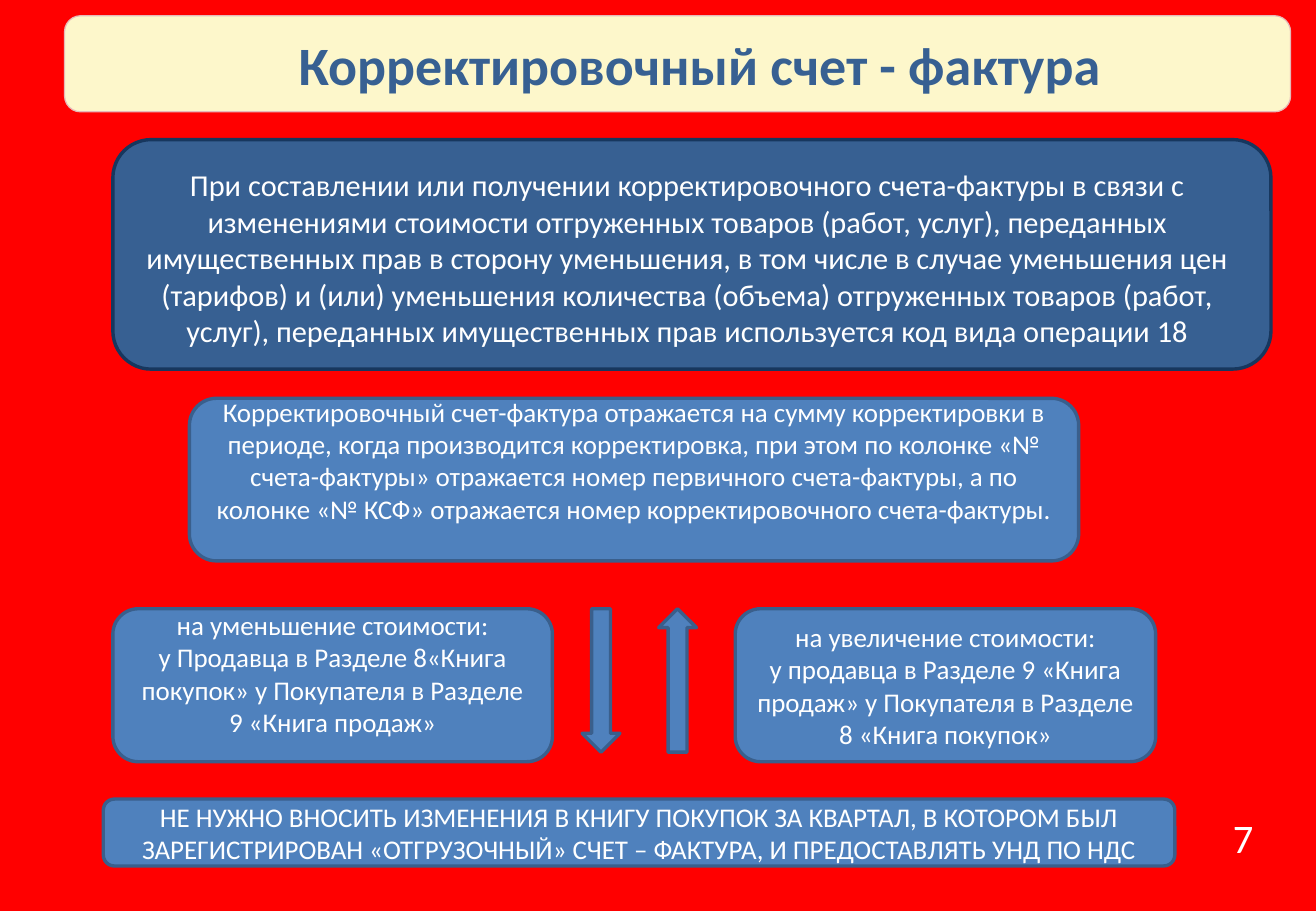
from dataclasses import dataclass

from pptx import Presentation
from pptx import util as u
from pptx.dml.color import RGBColor
from pptx.enum import shapes, text
from pptx.slide import Slide

FONT = "Calibri"
WHITE, RED, CREAM, PINK = "FFFFFF", "FF0000", "FDF7CB", "E6B9B8"
NAVY, DARK_NAVY, BLUE, BLUE_EDGE = "376092", "17375E", "4F81BD", "3A5F8C"
SHAPE = shapes.MSO_SHAPE
BRANCH_TOP = 12.73


@dataclass(frozen=True)
class Block:
    """A filled shape or plain text area; lengths in centimetres."""
    left: float
    top: float
    width: float
    height: float
    lines: tuple[str, ...] = ()
    size: float = 16
    color: str = WHITE
    bold: bool = False
    preset: SHAPE | None = SHAPE.ROUNDED_RECTANGLE
    fill: str = BLUE
    edge: str = BLUE_EDGE
    edge_width: float = 2
    bottom_inset: float = 0.13
    indent: float = 0
    line_spacing: float | None = None


def rgb(value: str) -> RGBColor:
    return RGBColor.from_string(value)


def write_lines(frame, block: Block) -> None:
    frame.word_wrap = True
    frame.vertical_anchor = text.MSO_ANCHOR.MIDDLE
    frame.margin_left = frame.margin_right = u.Cm(0.25)
    frame.margin_top = u.Cm(0.13)
    frame.margin_bottom = u.Cm(block.bottom_inset)
    for index, line in enumerate(block.lines):
        paragraph = frame.add_paragraph() if index else frame.paragraphs[0]
        paragraph.alignment = text.PP_ALIGN.CENTER
        if block.line_spacing:
            paragraph.line_spacing = u.Pt(block.line_spacing)
        if block.indent:
            paragraph._p.get_or_add_pPr().set("marL", str(u.Cm(block.indent)))
        run = paragraph.add_run()
        run.text = line
        run.font.name = FONT
        run.font.size = u.Pt(block.size)
        run.font.bold = block.bold
        run.font.color.rgb = rgb(block.color)


def draw(slide: Slide, block: Block) -> None:
    place = [u.Cm(n) for n in (block.left, block.top, block.width, block.height)]
    if block.preset is None:
        shape = slide.shapes.add_textbox(*place)
    else:
        shape = slide.shapes.add_shape(block.preset, *place)
        shape.shadow.inherit = False
        shape.fill.solid()
        shape.fill.fore_color.rgb = rgb(block.fill)
        shape.line.color.rgb = rgb(block.edge)
        shape.line.width = u.Pt(block.edge_width)
    if block.lines:
        write_lines(shape.text_frame, block)


BLOCKS = (
    # Slide number
    Block(25.17, 16.92, 1.63, 1.42, ("7",), size=24, preset=None, line_spacing=22),
    # Title
    Block(1.35, 0.33, 25.63, 2.01, ("Корректировочный счет - фактура",),
          size=32, color=NAVY, bold=True, fill=CREAM, edge=PINK,
          edge_width=0.75, indent=0.94),
    # Operation code 18: panel and its text
    Block(2.36, 2.92, 24.21, 4.8, fill=NAVY, edge=DARK_NAVY),
    Block(2.57, 3.33, 23.6, 4.11, (
        "При составлении или получении корректировочного счета-фактуры в связи "
        "с изменениями стоимости отгруженных товаров (работ, услуг), переданных "
        "имущественных прав в сторону уменьшения, в том числе в случае "
        "уменьшения цен (тарифов) и (или) уменьшения количества (объема) "
        "отгруженных товаров (работ, услуг), переданных имущественных прав "
        "используется код вида операции 18",), size=18, preset=None),
    # Period of the correction
    Block(3.96, 8.33, 18.59, 3.4, (
        "Корректировочный счет-фактура отражается на сумму корректировки в "
        "периоде, когда производится корректировка, при этом по колонке "
        "«№ счета-фактуры» отражается номер первичного счета-фактуры, а по "
        "колонке «№ КСФ» отражается номер корректировочного счета-фактуры.",),
          bottom_inset=0.95),
    # Decrease and increase of the cost
    Block(2.36, BRANCH_TOP, 9.19, 3.2, (
        "на уменьшение стоимости:",
        "у Продавца в Разделе 8«Книга покупок» у Покупателя в Разделе 9 "
        "«Книга продаж»"), bottom_inset=0.64),
    Block(15.37, BRANCH_TOP, 8.79, 3.2, (
        "на увеличение стоимости:",
        "у продавца в Разделе 9 «Книга продаж» у Покупателя в Разделе 8 "
        "«Книга покупок»")),
    Block(12.17, BRANCH_TOP, 0.79, 3, preset=SHAPE.DOWN_ARROW),
    Block(13.77, BRANCH_TOP, 0.79, 3, preset=SHAPE.UP_ARROW),
    # Closing reminder
    Block(2.16, 16.71, 22.4, 1.4, (
        "НЕ НУЖНО ВНОСИТЬ ИЗМЕНЕНИЯ В КНИГУ ПОКУПОК ЗА КВАРТАЛ, В КОТОРОМ БЫЛ "
        "ЗАРЕГИСТРИРОВАН «ОТГРУЗОЧНЫЙ» СЧЕТ – ФАКТУРА, И ПРЕДОСТАВЛЯТЬ УНД ПО "
        "НДС",)),
)


def main() -> None:
    deck = Presentation()
    deck.slide_width, deck.slide_height = u.Cm(27.51), u.Cm(19.05)
    slide = deck.slides.add_slide(deck.slide_layouts[6])
    slide.background.fill.solid()
    slide.background.fill.fore_color.rgb = rgb(RED)
    for block in BLOCKS:
        draw(slide, block)
    deck.save("out.pptx")


if __name__ == "__main__":
    main()
